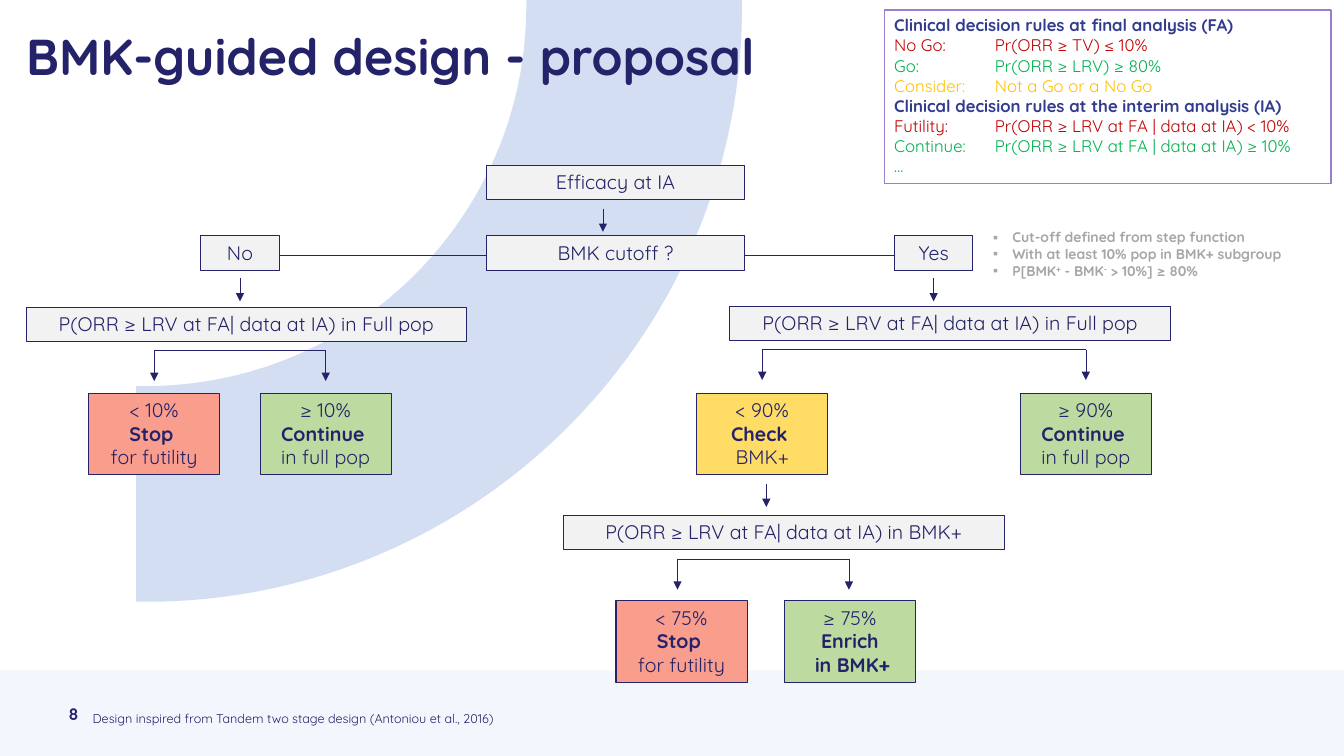
from copy import deepcopy
from lxml import etree
from pptx import Presentation
from pptx.dml.color import RGBColor
from pptx.enum.shapes import MSO_CONNECTOR, MSO_SHAPE
from pptx.enum.text import MSO_ANCHOR, MSO_AUTO_SIZE, PP_ALIGN
from pptx.oxml.ns import qn
from pptx.util import Inches, Pt

NAVY = RGBColor(0x24, 0x22, 0x69)
BLUE = RGBColor(0x32, 0x3C, 0x8E)
SKY = RGBColor(0xD3, 0xDE, 0xF2)
PALE = RGBColor(0xF3, 0xF7, 0xFD)
GREY = RGBColor(0xF2, 0xF2, 0xF2)
DIM = RGBColor(0xA6, 0xA6, 0xA6)
WHITE = RGBColor(0xFF, 0xFF, 0xFF)
LILAC = RGBColor(0x9B, 0x7D, 0xCD)
SALMON = RGBColor(0xF9, 0x9D, 0x8D)
LIME = RGBColor(0xBD, 0xDB, 0xA0)
GOLD = RGBColor(0xFF, 0xDC, 0x65)
RED = RGBColor(0xC0, 0x00, 0x00)
GREEN = RGBColor(0x00, 0xB0, 0x50)
AMBER = RGBColor(0xFF, 0xC0, 0x00)
RECT, LINE = MSO_SHAPE.RECTANGLE, MSO_CONNECTOR.STRAIGHT
LEFT, CENTER = PP_ALIGN.LEFT, PP_ALIGN.CENTER
TOP, MIDDLE = MSO_ANCHOR.TOP, MSO_ANCHOR.MIDDLE
FIXED = MSO_AUTO_SIZE.NONE
WIDE, HIGH = 13.33, 7.5


def write(shape, rows, size=14, color=NAVY, bold=False, align=LEFT,
          anchor=TOP, inset=None, bullet=None, lead=None, tab=None):
    """Fill a shape; a row is a string or a list of (text, color, bold).

    In a text, a newline breaks the line and ^ toggles superscript.
    """
    frame = shape.text_frame
    frame.word_wrap, frame.auto_size = True, FIXED
    frame.vertical_anchor = anchor
    if inset is not None:
        frame.margin_left = frame.margin_right = Inches(inset)
        frame.margin_top = frame.margin_bottom = Inches(inset)
    for i, row in enumerate(rows):
        para = frame.add_paragraph() if i else frame.paragraphs[0]
        props = para._p.get_or_add_pPr()
        if bullet:
            props.set("marL", str(Inches(0.19)))
            props.set("indent", str(Inches(-0.19)))
            etree.SubElement(props, qn("a:buChar")).set("char", bullet)
        if tab:
            stops = etree.SubElement(props, qn("a:tabLst"))
            etree.SubElement(stops, qn("a:tab"), pos=str(Inches(tab)), algn="l")
        para.alignment, para.space_before = align, Pt(0)
        if lead:
            para.line_spacing = Pt(lead)
        for text, hue, heavy in [(row, color, bold)] if isinstance(row, str) else row:
            for k, line in enumerate(text.split("\n")):
                if k:
                    para.add_line_break()
                    para._p[-1].append(deepcopy(run._r.rPr))
                for j, part in enumerate(line.split("^")):
                    if not part:
                        continue
                    run = para.add_run()
                    run.text = part
                    font = run.font
                    font.name, font.size, font.bold = "Quicksand", Pt(size), heavy
                    font.color.rgb = hue
                    if j % 2:
                        run._r.get_or_add_rPr().set("baseline", "30000")


def draw(x, y, x2, y2, arrow=False):
    """Draw a thin navy line, with a head at its end if arrow is set."""
    link = slide.shapes.add_connector(LINE, Inches(x), Inches(y), Inches(x2), Inches(y2))
    link.line.color.rgb, link.line.width = NAVY, Pt(0.5)
    if arrow:
        etree.SubElement(link.line._get_or_add_ln(), qn("a:tailEnd")).set("type", "triangle")
    etree.SubElement(link._element.spPr, qn("a:effectLst"))


deck = Presentation()
deck.slide_width, deck.slide_height = Inches(WIDE), Inches(HIGH)
slide = deck.slides.add_slide(deck.slide_layouts[1])
title, notes = slide.placeholders

# Quarter ring and footer band
edge = [(7.36, 0), (7.36, 0.06), (7.36, 3.33), (4.71, 5.97), (1.45, 5.97), (1.35, 5.97),
        (1.35, 3.83), (1.45, 3.83), (3.53, 3.83), (5.22, 2.14), (5.22, 0.06)]
pen = slide.shapes.build_freeform(Inches(5.22), 0)
pen.add_line_segments([(Inches(x), Inches(y)) for x, y in edge])
ring = pen.convert_to_shape()
legs = list(ring.element.iter(qn("a:lnTo")))
for first in (2, 8):  # three straight legs become one curve
    bend = etree.Element(qn("a:cubicBezTo"))
    legs[first].addprevious(bend)
    for leg in legs[first:first + 3]:
        bend.append(leg[0])
        leg.getparent().remove(leg)
band = slide.shapes.add_shape(RECT, 0, Inches(6.65), Inches(WIDE), Inches(HIGH - 6.65))
for shape, fill in ((ring, SKY), (band, PALE)):
    shape.shadow.inherit = False
    shape.fill.solid()
    shape.fill.fore_color.rgb = fill
    shape.line.fill.background()

# Title and cut-off notes, brought in front of the ring
for shape, spot in ((title, (0.26, 0.13, 11.46, 2.42)), (notes, (9.75, 2.22, 3.11, 0.61))):
    shape.left, shape.top, shape.width, shape.height = map(Inches, spot)
    shape.element.getparent().append(shape.element)
write(title, ["BMK-guided design - proposal"], size=36, bold=True, inset=0, lead=52)
write(notes, ["Cut-off defined from step function",
              "With at least 10% pop in BMK+ subgroup",
              "P[BMK^+^ - BMK^-^ > 10%] ≥ 80%"], size=10, color=DIM, bold=True, bullet="▪")

# Footer
page = slide.shapes.add_textbox(Inches(0.68), Inches(6.88), Inches(0.45), Inches(0.4))
write(page, ["8"], size=12, bold=True, anchor=MIDDLE, inset=0)
cite = slide.shapes.add_textbox(Inches(0.82), Inches(7), Inches(5.05), Inches(0.25))
write(cite, ["Design inspired from Tandem two stage design (Antoniou et al., 2016)"], size=9)

# Links: the yes/no line, single steps, then forks
draw(2.77, 2.53, 8.89, 2.53)
for x, y in ((5.98, 2.07), (2.38, 2.76), (9.26, 2.76), (7.6, 4.8)):
    draw(x, y, x, y + 0.23, arrow=True)
for x, x2, y in ((1.53, 3.23, 3.48), (7.56, 10.77, 3.47), (6.72, 8.42, 5.55)):
    draw(x, y, x2, y)
    for end in (x, x2):
        draw(end, y, end, y + 0.3, arrow=True)

# Boxes: left, top, size, fill, rows
STEP, SIDE, TEST, RESULT = (2.55, 0.34), (0.78, 0.34), (4.37, 0.34), (1.3, 0.81)
full = "P(ORR ≥ LRV at FA| data at IA) in Full pop"
stop = [("Stop \n", NAVY, True), ("for futility", NAVY, False)]
go = [("Continue \n", NAVY, True), ("in full pop", NAVY, False)]
check = [("Check \n", NAVY, True), ("BMK+", NAVY, False)]
enrich = [("Enrich\n in BMK+", NAVY, True)]
boxes = [
    (4.83, 1.64, STEP, GREY, ["Efficacy at IA"]),
    (4.83, 2.34, STEP, GREY, ["BMK cutoff ?"]),
    (1.99, 2.34, SIDE, GREY, ["No"]),
    (8.87, 2.34, SIDE, GREY, ["Yes"]),
    (0.26, 3.05, TEST, GREY, [full]),
    (7.24, 3.04, TEST, GREY, [full]),
    (5.59, 5.11, TEST, GREY, ["P(ORR ≥ LRV at FA| data at IA) in BMK+"]),
    (0.88, 3.9, RESULT, SALMON, ["< 10%", stop]),
    (2.58, 3.9, RESULT, LIME, ["≥ 10%", go]),
    (6.91, 3.9, RESULT, GOLD, ["< 90%", check]),
    (10.12, 3.9, RESULT, LIME, ["≥ 90%", go]),
    (6.11, 5.96, RESULT, SALMON, ["< 75%", stop]),
    (7.78, 5.96, RESULT, LIME, ["≥ 75%", enrich]),
    (8.77, 0.1, (4.43, 1.72), WHITE, [
        [("Clinical decision rules at final analysis (FA)", BLUE, True)],
        [("No Go: \tPr(ORR ≥ TV) ≤ 10%\n", RED, False),
         ("Go: \tPr(ORR ≥ LRV) ≥ 80%", GREEN, False)],
        [("Consider:\tNot a Go or a No Go", AMBER, False)],
        [("Clinical decision rules at the interim analysis (IA)", BLUE, True)],
        [("Futility:\tPr(ORR ≥ LRV at FA | data at IA) < 10%", RED, False)],
        [("Continue:\tPr(ORR ≥ LRV at FA | data at IA) ≥ 10%", GREEN, False)],
        [("…", GREEN, False)]]),
]
for x, y, (w, h), fill, rows in boxes:
    box = slide.shapes.add_shape(RECT, Inches(x), Inches(y), Inches(w), Inches(h))
    box.shadow.inherit = False
    box.fill.solid()
    box.fill.fore_color.rgb = fill
    rules = fill == WHITE
    box.line.color.rgb = LILAC if rules else NAVY
    box.line.width = Pt(1 if rules else 0.75)
    write(box, rows, size=12 if rules else 14, align=LEFT if rules else CENTER,
          tab=1 if rules else None)

deck.save("out.pptx")
